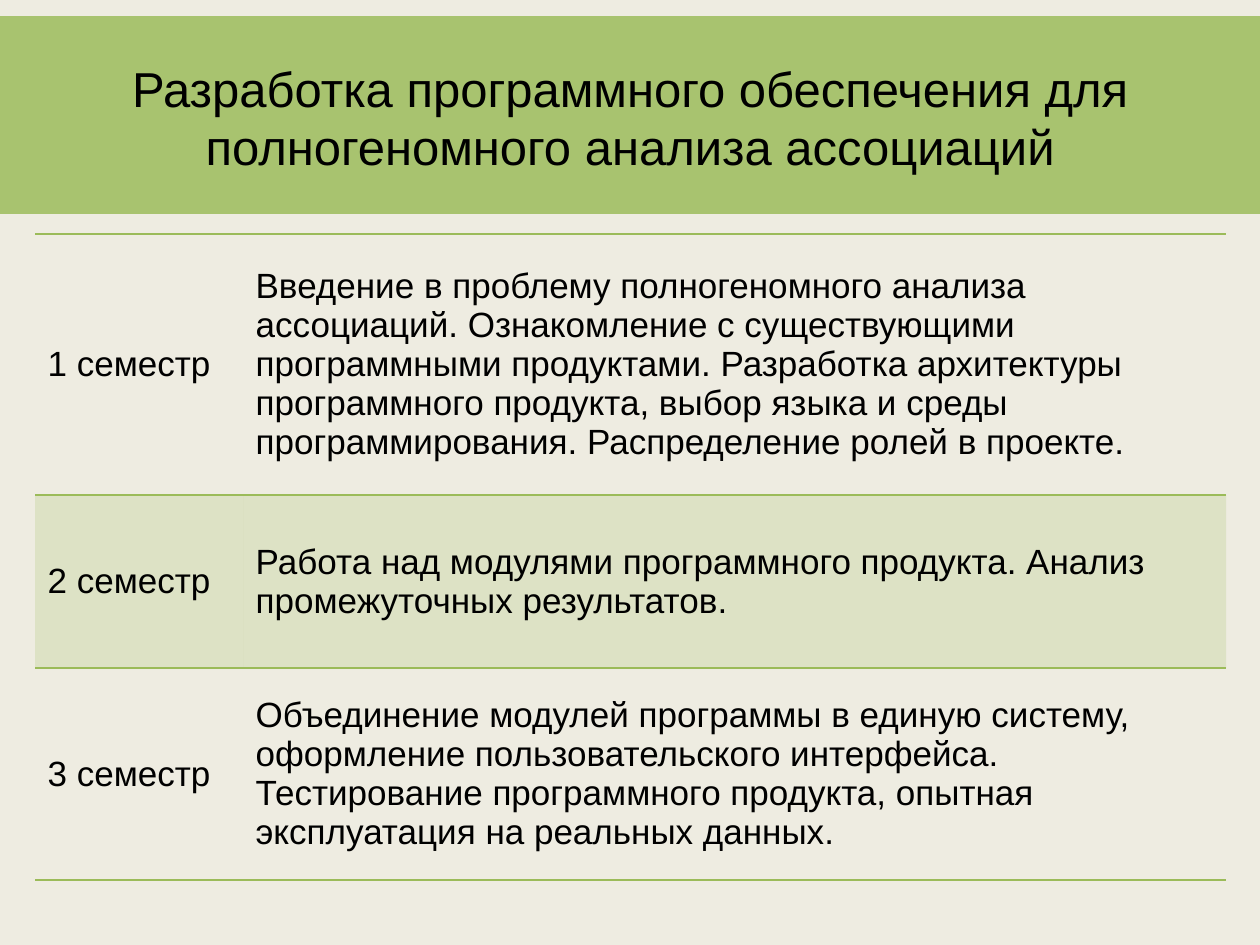
from lxml.etree import SubElement
from pptx import Presentation
from pptx.dml.color import RGBColor as RGB
from pptx.enum.shapes import MSO_SHAPE as Shape
from pptx.enum.text import MSO_ANCHOR as Anchor, PP_ALIGN as Align
from pptx.oxml import parse_xml
from pptx.oxml.ns import nsdecls, qn
from pptx.util import Pt

SCALE = 914400 / 126  # EMU in one px
WIDE, HIGH = 1260, 945
FONT = "Arial"
BLACK = RGB(0x00, 0x00, 0x00)
GREEN = RGB(0x9B, 0xBB, 0x59)
SAND = RGB(0xEE, 0xEC, 0xE1)
PLAIN = "{2D5ABB26-0587-4C30-8999-92F81FD0307C}"  # table style without grid

TITLE = "Разработка программного обеспечения для полногеномного анализа ассоциаций"
# Text, height, edges with a rule, band opacity in percent
TERMS = [
    ("Введение в проблему полногеномного анализа ассоциаций. "
     "Ознакомление с существующими программными продуктами. "
     "Разработка архитектуры программного продукта, выбор языка и среды "
     "программирования. Распределение ролей в проекте.", 261, "TB", 0),
    ("Работа над модулями программного продукта. "
     "Анализ промежуточных результатов.", 173, "T", 20),
    ("Объединение модулей программы в единую систему, оформление "
     "пользовательского интерфейса. Тестирование программного продукта, "
     "опытная эксплуатация на реальных данных.", 212, "B", 0),
]


def px(*nums):
    return [round(n * SCALE) for n in nums]


class Deck:
    def __init__(self):
        self.prs = Presentation()
        self.prs.slide_width, self.prs.slide_height = px(WIDE, HIGH)
        self.slide = self.prs.slides.add_slide(self.prs.slide_layouts[5])
        back = self.slide.background.fill
        back.solid()
        back.fore_color.rgb = SAND

    def tint(self, fill, part):
        """Fill with green at an opacity given in percent."""
        fill.solid()
        fill.fore_color.rgb = GREEN
        for clr in fill._xPr.iter(qn("a:srgbClr")):
            SubElement(clr, qn("a:alpha"), val=str(part * 1000))

    def label(self, frame, text, size, align):
        frame.text = text
        para = frame.paragraphs[0]
        para.alignment = align
        font = para.font
        font.name, font.size, font.color.rgb = FONT, Pt(size), BLACK

    def title(self, text, *box):
        head = self.slide.shapes.title
        head.left, head.top, head.width, head.height = px(*box)
        head.text_frame.vertical_anchor = Anchor.MIDDLE
        self.label(head.text_frame, text, 28, Align.CENTER)

    def band(self, part, *box):
        bar = self.slide.shapes.add_shape(Shape.RECTANGLE, *px(*box))
        bar.shadow.inherit = False
        bar.line.fill.background()
        self.tint(bar.fill, part)
        # The band lies behind the title
        self.slide.shapes.title.element.addprevious(bar.element)

    def rule(self, cell, edges):
        props = cell._tc.get_or_add_tcPr()
        for spot, edge in enumerate(edges):
            props.insert(spot, parse_xml(
                f'<a:ln{edge} {nsdecls("a")} w="12700"><a:solidFill>'
                f'<a:srgbClr val="{GREEN}"/></a:solidFill></a:ln{edge}>'))

    def table(self, terms, left, top, cols):
        highs = [term[1] for term in terms]
        box = px(left, top, sum(cols), sum(highs))
        grid = self.slide.shapes.add_table(len(terms), len(cols), *box).table
        grid.first_row = grid.horz_banding = False
        grid._tbl.tblPr.find(qn("a:tableStyleId")).text = PLAIN
        for col, wide in zip(grid.columns, px(*cols)):
            col.width = wide
        for row, high in zip(grid.rows, px(*highs)):
            row.height = high
        for num, (text, _, edges, part) in enumerate(terms):
            for cell, words in zip(grid.rows[num].cells,
                                   (f"{num + 1} семестр", text)):
                cell.vertical_anchor = Anchor.MIDDLE
                self.label(cell.text_frame, words, 20, Align.LEFT)
                if part:
                    self.tint(cell.fill, part)
                else:
                    cell.fill.background()
                self.rule(cell, edges)


def main():
    deck = Deck()
    # Heading on its band
    deck.title(TITLE, 63, 38, 1134, 158)
    deck.band(83, 0, 16, WIDE, 198)
    # Plan by term
    deck.table(TERMS, 35, 234, (208, 983))
    deck.prs.save("out.pptx")


if __name__ == "__main__":
    main()
